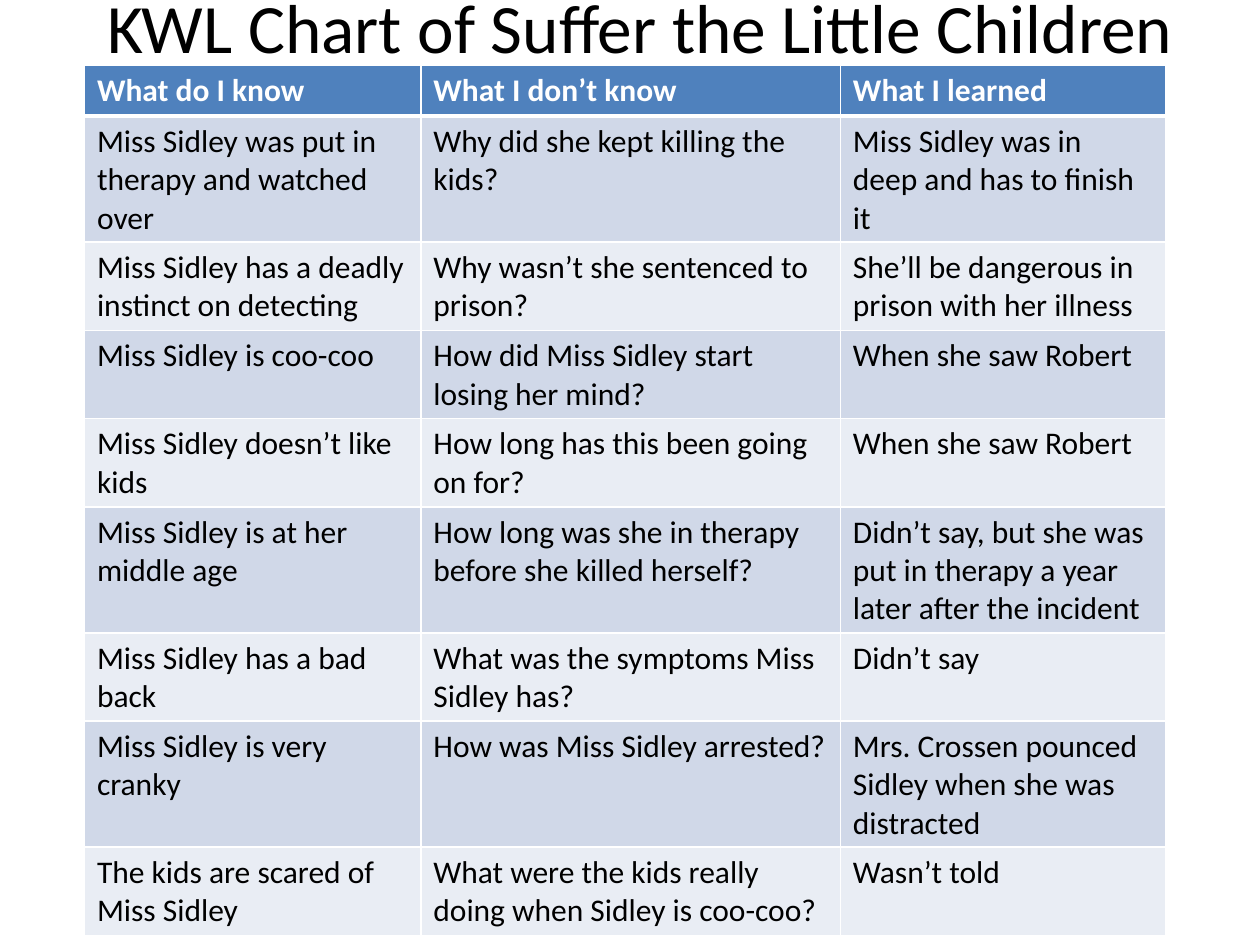
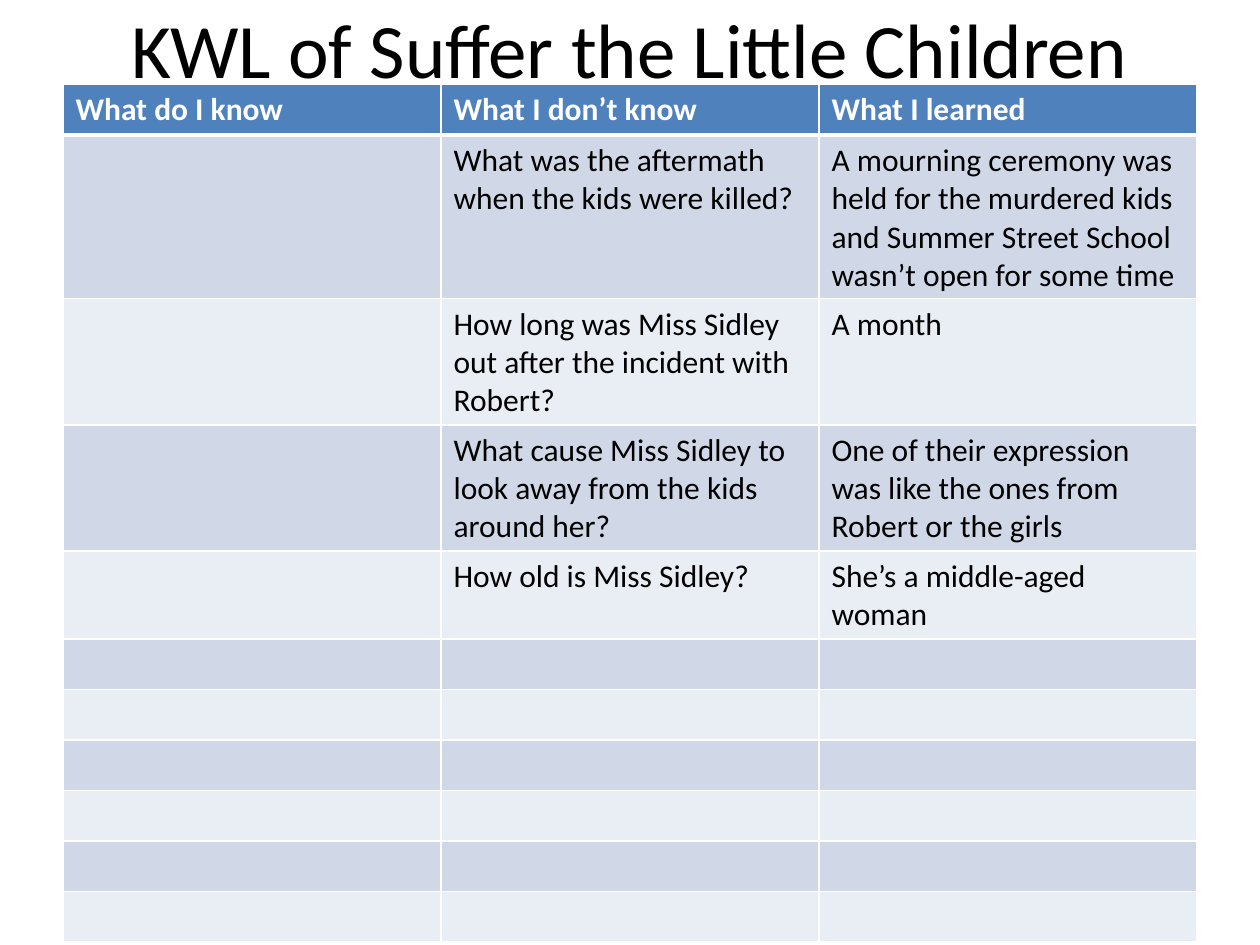
from lxml import etree
from pptx import Presentation
from pptx.dml.color import RGBColor
from pptx.enum.text import MSO_ANCHOR as Anchor, PP_ALIGN as Align
from pptx.oxml import parse_xml
from pptx.oxml.ns import nsdecls
from pptx.util import Inches, Pt

FONT = "Calibri"
BLACK, WHITE = "000000", "FFFFFF"
HEADER_FILL = "4F81BD"
BAND_FILLS = ["D0D8E8", "E9EDF4"]
HEADINGS = ("What do I know", "What I don’t know", "What I learned")
LINE_HEIGHT, CELL_PADDING = 0.3, 0.1
EMPTY_ROW = (1, "", "", "")


def write(frame, text, size=18, color=BLACK, bold=False, align=Align.LEFT):
    frame.word_wrap = True
    line = frame.paragraphs[0]
    line.text = text
    line.alignment = align
    line.font.name = FONT
    line.font.size = Pt(size)
    line.font.bold = bold
    line.font.color.rgb = RGBColor.from_string(color)


def border(cell, **widths):
    """Draw white cell borders; widths are points keyed L, R, T and B."""
    for position, (side, width) in enumerate(widths.items()):
        edge = parse_xml(
            f'<a:ln{side} {nsdecls("a")} w="{Pt(width)}"><a:solidFill>'
            f'<a:srgbClr val="{WHITE}"/></a:solidFill></a:ln{side}>')
        cell._tc.get_or_add_tcPr().insert(position, edge)


# Each row: number of text lines it needs, then its three cells
first_rows = [
    (3, "Miss Sidley was put in therapy and watched over",
     "Why did she kept killing the kids?",
     "Miss Sidley was in deep and has to finish it"),
    (2, "Miss Sidley has a deadly instinct on detecting",
     "Why wasn’t she sentenced to prison?",
     "She’ll be dangerous in prison with her illness"),
    (2, "Miss Sidley is coo-coo",
     "How did Miss Sidley start losing her mind?",
     "When she saw Robert"),
    (2, "Miss Sidley doesn’t like kids",
     "How long has this been going on for?",
     "When she saw Robert"),
    (3, "Miss Sidley is at her middle age",
     "How long was she in therapy before she killed herself?",
     "Didn’t say, but she was put in therapy a year later after the incident"),
    (2, "Miss Sidley has a bad back",
     "What was the symptoms Miss Sidley has?",
     "Didn’t say"),
    (3, "Miss Sidley is very cranky",
     "How was Miss Sidley arrested?",
     "Mrs. Crossen pounced Sidley when she was distracted"),
    (2, "The kids are scared of Miss Sidley",
     "What were the kids really doing when Sidley is coo-coo?",
     "Wasn’t told"),
]
second_rows = [
    (4, "", "What was the aftermath when the kids were killed?",
     "A mourning ceremony was held for the murdered kids and "
     "Summer Street School wasn’t open for some time"),
    (3, "", "How long was Miss Sidley out after the incident with Robert?",
     "A month"),
    (3, "", "What cause Miss Sidley to look away from the kids around her?",
     "One of their expression was like the ones from Robert or the girls"),
    (2, "", "How old is Miss Sidley?", "She’s a middle-aged woman"),
] + [EMPTY_ROW] * 6

# Title, its size and position, table position, column widths, rows
pages = [
    ("KWL Chart of Suffer the Little Children", 39.6, (0.58, -0.42),
     (0.67, 0.52), (2.67, 3.33, 2.58), first_rows),
    ("KWL of Suffer the Little Children", 44, (0.5, -0.25),
     (0.5, 0.67), (3, 3, 3), second_rows),
]

deck = Presentation()
deck.slide_width, deck.slide_height = Inches(10), Inches(7.5)

for title, title_size, title_at, chart_at, column_widths, rows in pages:
    slide = deck.slides.add_slide(deck.slide_layouts[6])
    heading = slide.shapes.add_textbox(
        *map(Inches, title_at), Inches(9), Inches(1.25)).text_frame
    heading.vertical_anchor = Anchor.MIDDLE
    write(heading, title, size=title_size, align=Align.CENTER)

    all_rows = [(1, *HEADINGS)] + rows
    kwl = slide.shapes.add_table(
        len(all_rows), len(HEADINGS), *map(Inches, chart_at),
        Inches(sum(column_widths)), Inches(1)).table
    for column, width in zip(kwl.columns, column_widths):
        column.width = Inches(width)

    for r, (line_count, *entries) in enumerate(all_rows):
        kwl.rows[r].height = Inches(CELL_PADDING + LINE_HEIGHT * line_count)
        is_header = r == 0
        fill = HEADER_FILL if is_header else BAND_FILLS[(r - 1) % 2]
        for c, entry in enumerate(entries):
            cell = kwl.cell(r, c)
            cell.fill.solid()
            cell.fill.fore_color.rgb = RGBColor.from_string(fill)
            border(cell, L=1, R=1, T=3 if r == 1 else 1, B=3 if is_header else 1)
            if entry:
                write(cell.text_frame, entry, bold=is_header,
                      color=WHITE if is_header else BLACK)

deck.save("out.pptx")
